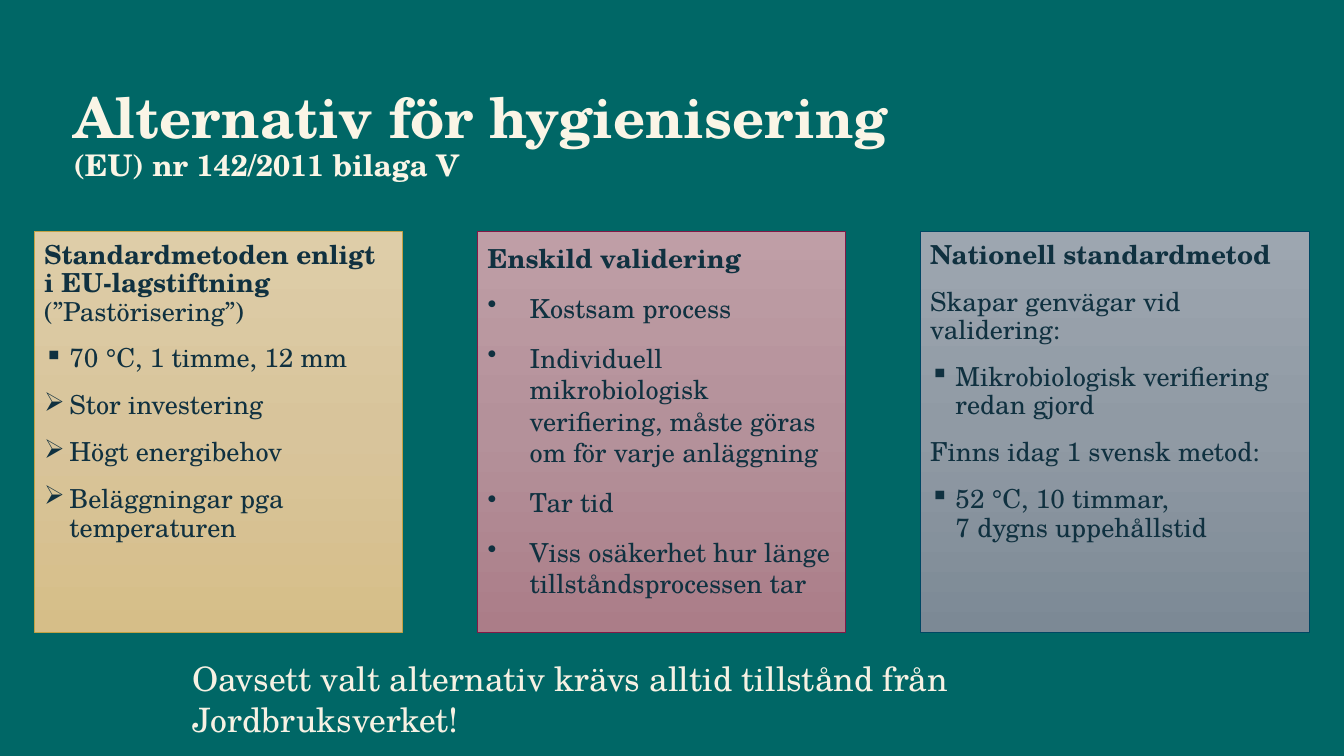
from copy import deepcopy

from lxml import etree
from pptx import Presentation
from pptx.dml.color import RGBColor
from pptx.enum.shapes import MSO_SHAPE
from pptx.enum.text import MSO_ANCHOR, PP_ALIGN
from pptx.oxml.ns import qn
from pptx.util import Pt

RECTANGLE = MSO_SHAPE.RECTANGLE
TOP, MIDDLE = MSO_ANCHOR.TOP, MSO_ANCHOR.MIDDLE
LEFT = PP_ALIGN.LEFT

COLORS = {
    "background": "006766",
    "title": "FAF5E6",
    "card text": "103140",
    "footer": "F6F1E3",
    "sand": ["DECDA8", "D8C49B", "D6BE88"],
    "sand line": "C2A245",
    "rose": ["BF9EA6", "B4919A", "AB7D88"],
    "rose line": "821946",
    "slate": ["9DA6B0", "909AA4", "7C8995"],
    "slate line": "004763",
}
FONT = "TeX Gyre Schola"
CARD_TOP, CARD_HEIGHT = 165.6, 285.8
CARD_SIZE = 18.7


def add_paragraph(frame, spans, color, spacing=1.0, before=0, bullet=None, indent=0):
    first = not frame.paragraphs[0].runs
    para = frame.paragraphs[0] if first else frame.add_paragraph()
    if bullet:
        properties = para._p.get_or_add_pPr()
        properties.set("marL", str(Pt(indent)))
        properties.set("indent", str(-Pt(indent)))
        etree.SubElement(properties, qn("a:buChar")).set("char", bullet)
    layout = {"alignment": LEFT, "line_spacing": spacing, "space_before": Pt(0 if first else before)}
    for name, value in layout.items():
        setattr(para, name, value)
    for text, size, bold in spans:
        for number, line in enumerate(text.split("\n")):
            if number:
                para.add_line_break()
            span = para.add_run()
            span.text = line
            for name, value in {"name": FONT, "size": Pt(size), "bold": bold}.items():
                setattr(span.font, name, value)
            span.font.color.rgb = RGBColor.from_string(COLORS[color])


def add_text_box(page, left, top, width, height, anchor):
    box = page.shapes.add_textbox(Pt(left), Pt(top), Pt(width), Pt(height))
    box.text_frame.word_wrap = True
    box.text_frame.vertical_anchor = anchor
    return box.text_frame


deck = Presentation()
deck.slide_width, deck.slide_height = Pt(960), Pt(540)
page = deck.slides.add_slide(deck.slide_layouts[6])
page.background.fill.solid()
page.background.fill.fore_color.rgb = RGBColor.from_string(COLORS["background"])

title = add_text_box(page, 45.4, 50.4, 717.8, 94.3, MIDDLE)
title_spans = [("Alternativ för hygienisering\n", 40, True), ("(EU) nr 142/2011 bilaga V", 21.3, True)]
add_paragraph(title, title_spans, "title", spacing=0.9)

cards = [
    {
        "left": 24.5, "width": 262.8, "theme": "sand", "spacing": 0.9, "indent": 18,
        "heading": [("Standardmetoden enligt i EU-lagstiftning ", CARD_SIZE, True),
                    ("(”Pastörisering”)", CARD_SIZE, False)],
        "items": [
            ("▪", "70 °C, 1 timme, 12 mm"),
            ("➢", "Stor investering"),
            ("➢", "Högt energibehov"),
            ("➢", "Beläggningar pga temperaturen"),
        ],
    },
    {
        "left": 341.3, "width": 262.8, "theme": "rose", "spacing": 1.0, "indent": 30,
        "heading": [("Enskild validering", CARD_SIZE, True)],
        "items": [
            ("•", "Kostsam process"),
            ("•", "Individuell mikrobiologisk verifiering, måste göras om för varje anläggning"),
            ("•", "Tar tid"),
            ("•", "Viss osäkerhet hur länge tillståndsprocessen tar"),
        ],
    },
    {
        "left": 657.4, "width": 277.9, "theme": "slate", "spacing": 0.9, "indent": 18,
        "heading": [("Nationell standardmetod", CARD_SIZE, True)],
        "items": [
            (None, "Skapar genvägar vid validering:"),
            ("▪", "Mikrobiologisk verifiering redan gjord"),
            (None, "Finns idag 1 svensk metod:"),
            ("▪", "52 °C, 10 timmar,\n7 dygns uppehållstid"),
        ],
    },
]

for card in cards:
    box = page.shapes.add_shape(
        RECTANGLE, Pt(card["left"]), Pt(CARD_TOP), Pt(card["width"]), Pt(CARD_HEIGHT))
    box.shadow.inherit = False
    box.fill.gradient()
    box.fill.gradient_angle = 270
    stop_list = box._element.spPr.find(".//" + qn("a:gsLst"))
    stop_list.append(deepcopy(stop_list[-1]))
    for number, stop in enumerate(box.fill.gradient_stops):
        stop.position = number / 2
        stop.color.rgb = RGBColor.from_string(COLORS[card["theme"]][number])
    box.line.color.rgb = RGBColor.from_string(COLORS[card["theme"] + " line"])
    box.line.width = Pt(0.5)

    frame = box.text_frame
    frame.word_wrap = True
    frame.vertical_anchor = TOP
    for side in ("left", "top", "right", "bottom"):
        setattr(frame, "margin_" + side, Pt(7.2))
    add_paragraph(frame, card["heading"], "card text", card["spacing"])
    for bullet, text in card["items"]:
        add_paragraph(frame, [(text, CARD_SIZE, False)], "card text",
                      card["spacing"], 13.3, bullet, card["indent"])

footer = add_text_box(page, 130.3, 466.6, 709.9, 36, TOP)
footer_text = "Oavsett valt alternativ krävs alltid tillstånd från Jordbruksverket!"
add_paragraph(footer, [(footer_text, 24, False)], "footer")

deck.save("out.pptx")
